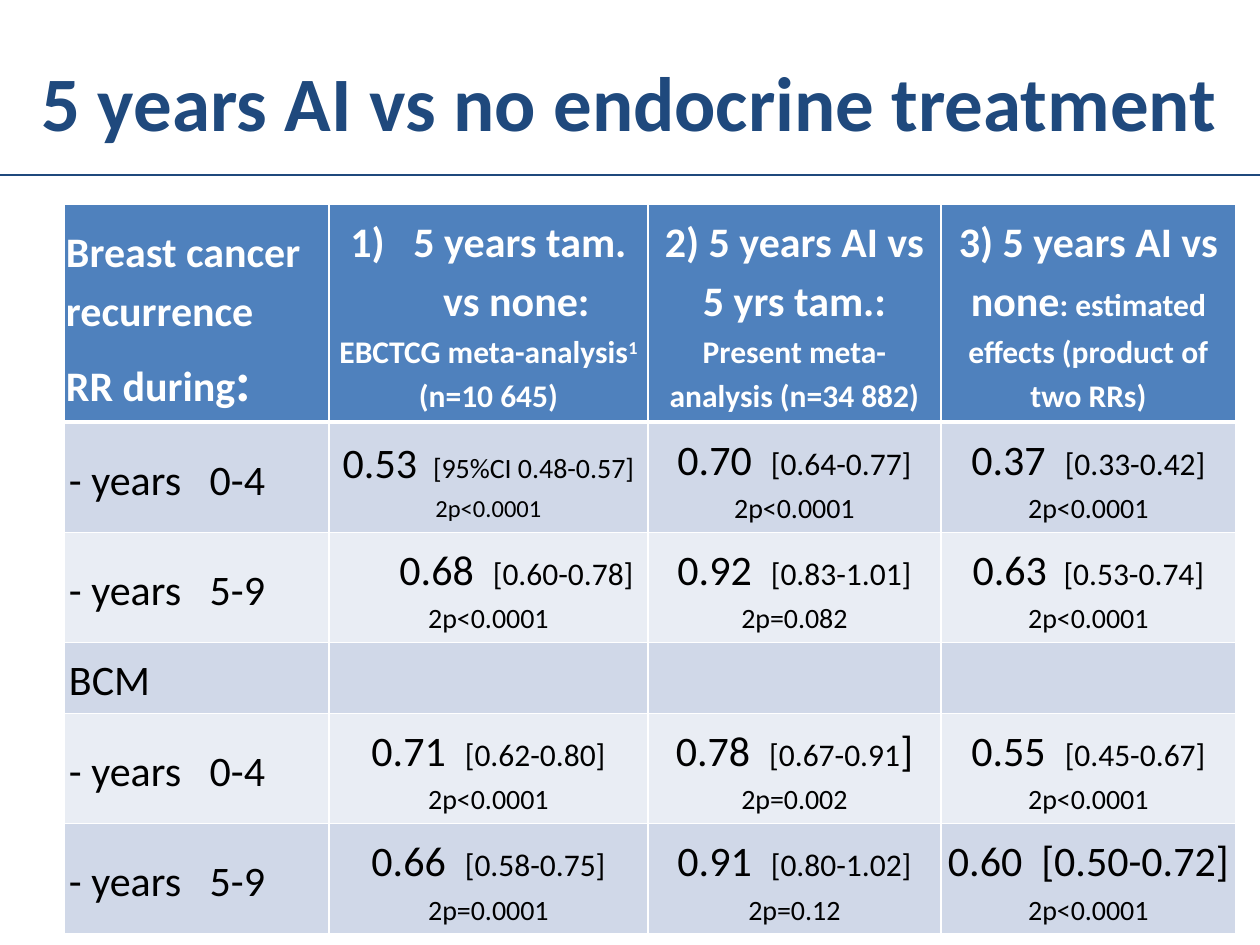
import pptx
import pptx.dml.color
import pptx.enum.shapes
import pptx.enum.text
import pptx.oxml
import pptx.oxml.ns
import pptx.util

RGB = pptx.dml.color.RGBColor
NAVY = RGB(0x1F, 0x49, 0x7D)
BLUE = RGB(0x4F, 0x81, 0xBD)
BAND_DARK = RGB(0xD0, 0xD8, 0xE8)
BAND_LIGHT = RGB(0xE9, 0xED, 0xF4)
WHITE = RGB(0xFF, 0xFF, 0xFF)
BLACK = RGB(0x00, 0x00, 0x00)
FONT = "Calibri"
ALIGN = pptx.enum.text.PP_ALIGN
ANCHOR = pptx.enum.text.MSO_ANCHOR

TITLE = "5 years AI vs no endocrine treatment"
# Each cell is a list of paragraphs, each paragraph a list of (text, size).
HEADER = [
    [[("Breast cancer recurrence", 24)], [("RR during", 24), (":", 32)]],
    [[("5 years tam. vs none:", 24), (" ", 18)],
     [("EBCTCG meta-analysis", 18), ("1", 18)],
     [("(n=10 645)", 18)]],
    [[("2) 5 years AI vs 5 yrs tam.: ", 24),
      ("Present meta-analysis (n=34 882)", 18)]],
    [[("3) 5 years AI vs none", 24),
      (": estimated effects (product of two RRs)", 18)]],
]


def ratio(value, interval, p_value):
    return [[(value + "  ", 24), (interval, 18)], [(p_value, 16)]]


def label(text):
    return [[(text, 24)]]


ROWS = [
    [label("- years   0-4"),
     [[("0.53", 24), ("  ", 20), ("[95%CI 0.48-0.57]", 16)], [("2p<0.0001", 14)]],
     ratio("0.70", "[0.64-0.77]", "2p<0.0001"),
     ratio("0.37", "[0.33-0.42]", "2p<0.0001")],
    [label("- years   5-9"),
     ratio("0.68", "[0.60-0.78]", "2p<0.0001"),
     ratio("0.92", "[0.83-1.01]", "2p=0.082"),
     [[("0.63 ", 24), (" [0.53-0.74]", 18)], [("2p<0.0001", 16)]]],
    [label("BCM"), [], [], []],
    [label("- years   0-4"),
     ratio("0.71", "[0.62-0.80]", "2p<0.0001"),
     [[("0.78  ", 24), ("[0.67-0.91", 18), ("]", 24)], [("2p=0.002", 16)]],
     ratio("0.55", "[0.45-0.67]", "2p<0.0001")],
    [label("- years   5-9"),
     ratio("0.66", "[0.58-0.75]", "2p=0.0001"),
     ratio("0.91", "[0.80-1.02]", "2p=0.12"),
     [[("0.60  [0.50-0.72]", 24)], [("2p<0.0001", 16)]]],
]
COL_WIDTHS = [265, 319, 293, 295]
ROW_HEIGHTS = [176, 102, 102, 68, 102, 102]
TABLE_LEFT, TABLE_TOP = 64, 204
SLIDE_W, SLIDE_H = 1260, 945


def px(n):
    return pptx.util.Emu(round(n * 914400 / 126))


def add_run(p, text, size, color, bold):
    r = p.add_run()
    r.text = text
    r.font.name, r.font.size = FONT, pptx.util.Pt(size)
    r.font.bold, r.font.color.rgb = bold, color
    return r


def set_margins(target, side):
    target.margin_left = target.margin_right = px(side)
    target.margin_top = target.margin_bottom = px(6)


def set_borders(cell, top, bottom):
    """Draw white borders, with the top and bottom widths in points."""
    tc_pr = cell._tc.get_or_add_tcPr()
    for side, width in (("L", 1), ("R", 1), ("T", top), ("B", bottom)):
        tc_pr.append(pptx.oxml.parse_xml(
            f'<a:ln{side} {pptx.oxml.ns.nsdecls("a")} w="{width * 12700}">'
            f'<a:solidFill><a:srgbClr val="{WHITE}"/></a:solidFill></a:ln{side}>'))


def fill_cell(cell, paragraphs, align, color, bold):
    tf = cell.text_frame
    for i, runs in enumerate(paragraphs):
        p = tf.add_paragraph() if i else tf.paragraphs[0]
        p.alignment, p.line_spacing = align, 1.15
        for text, size in runs:
            add_run(p, text, size, color, bold)


def add_title(s):
    title = s.shapes.title
    title.left, title.top = px(0), px(45)
    title.width, title.height = px(SLIDE_W), px(111)
    tf = title.text_frame
    tf.word_wrap, tf.vertical_anchor = True, ANCHOR.MIDDLE
    set_margins(tf, 5)
    p = tf.paragraphs[0]
    p.alignment = ALIGN.CENTER
    add_run(p, TITLE, 44, NAVY, True)


def add_rule(s):
    rule = s.shapes.add_connector(pptx.enum.shapes.MSO_CONNECTOR.STRAIGHT,
                                  px(0), px(175), px(SLIDE_W), px(175))
    rule.line.color.rgb, rule.line.width = NAVY, pptx.util.Pt(1.5)
    rule._element.spPr.append(pptx.oxml.parse_xml(
        f'<a:effectLst {pptx.oxml.ns.nsdecls("a")}/>'))


def add_results(s):
    table = s.shapes.add_table(
        len(ROW_HEIGHTS), len(COL_WIDTHS), px(TABLE_LEFT), px(TABLE_TOP),
        px(sum(COL_WIDTHS)), px(sum(ROW_HEIGHTS))).table
    for column, width in zip(table.columns, COL_WIDTHS):
        column.width = px(width)
    for row, height in zip(table.rows, ROW_HEIGHTS):
        row.height = px(height)
    for i, row in enumerate([HEADER] + ROWS):
        header = i == 0
        for j, paragraphs in enumerate(row):
            cell = table.cell(i, j)
            set_borders(cell, 3 if i == 1 else 1, 3 if header else 1)
            cell.fill.solid()
            cell.fill.fore_color.rgb = (
                BLUE if header else BAND_DARK if i % 2 else BAND_LIGHT)
            low = j == 0 and (header or i == 3)
            cell.vertical_anchor = ANCHOR.BOTTOM if low else ANCHOR.MIDDLE
            set_margins(cell, 2 if header and j == 0 else 5)
            fill_cell(cell, paragraphs, ALIGN.CENTER if j else ALIGN.LEFT,
                      WHITE if header else BLACK, header)

    trial, citation = table.cell(0, 1).text_frame.paragraphs[:2]
    p_pr = trial._p.get_or_add_pPr()
    p_pr.set("marL", str(px(63)))
    p_pr.set("indent", str(-px(63)))
    p_pr.append(pptx.oxml.parse_xml(
        f'<a:buAutoNum {pptx.oxml.ns.nsdecls("a")} type="arabicParenR"/>'))
    citation.runs[1].font._element.set("baseline", "30000")
    shifted = table.cell(2, 1).text_frame.paragraphs[0]
    shifted._p.get_or_add_pPr().set("marL", str(px(56)))


def main():
    prs = pptx.Presentation()
    prs.slide_width, prs.slide_height = px(SLIDE_W), px(SLIDE_H)
    s = prs.slides.add_slide(prs.slide_layouts[5])
    add_title(s)
    add_rule(s)
    add_results(s)
    prs.save("out.pptx")


if __name__ == "__main__":
    main()
